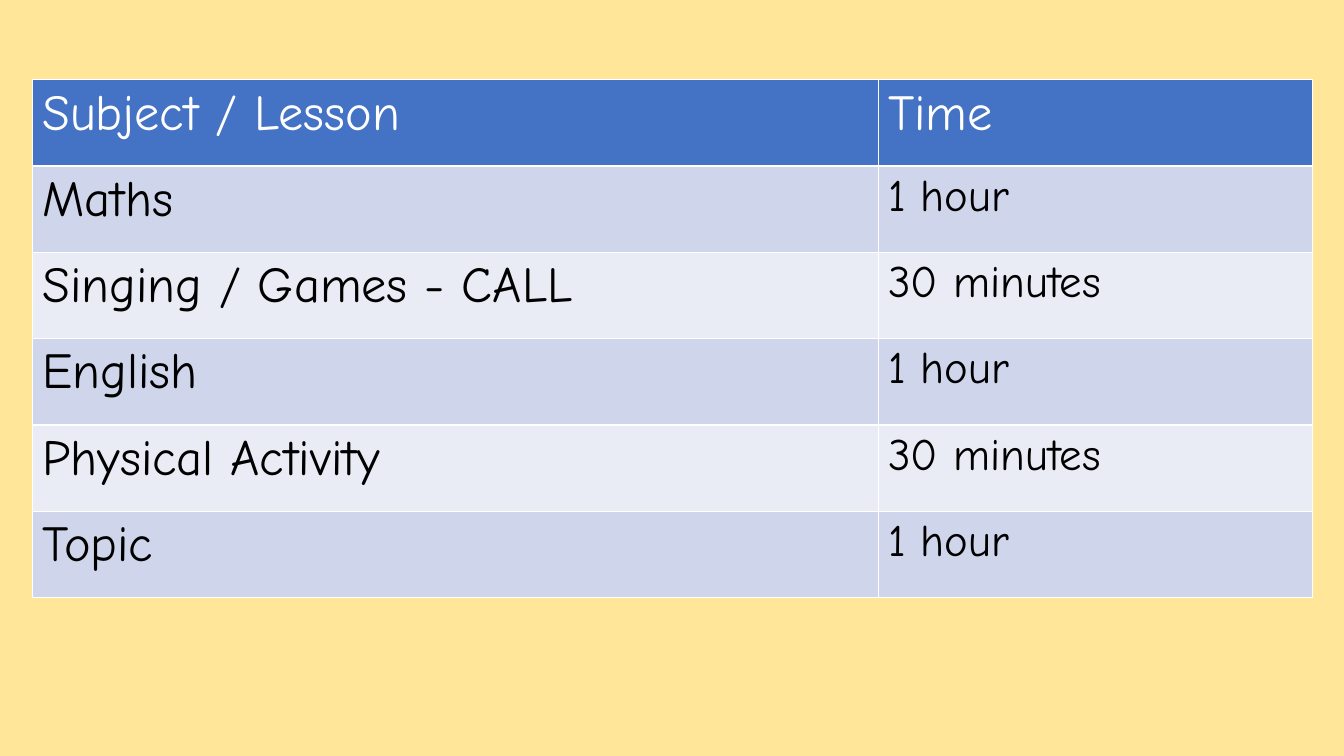
from lxml import etree
from pptx import Presentation
from pptx.dml.color import RGBColor
from pptx.oxml.ns import qn
from pptx.util import Inches, Pt

FONT = "Comic Neue"
WHITE, BLACK = "FFFFFF", "000000"
HEADER, BAND_DARK, BAND_LIGHT = "4472C4", "CFD5EA", "E9EBF5"
ROWS = [
    ("Subject / Lesson", "Time"),
    ("Maths", "1 hour"),
    ("Singing / Games - CALL", "30 minutes"),
    ("English", "1 hour"),
    ("Physical Activity", "30 minutes"),
    ("Topic", "1 hour"),
]
COL_WIDTHS = (8.39, 4.31)
TABLE_HEIGHT = 5.14


def rgb(color):
    return RGBColor.from_string(color)


def add_borders(cell, color):
    """Draw 1 pt borders round the cell; call before the fill is set."""
    tc_pr = cell._tc.get_or_add_tcPr()
    for side in "LRTB":
        ln = etree.SubElement(tc_pr, qn(f"a:ln{side}"), w=str(Pt(1)))
        fill = etree.SubElement(ln, qn("a:solidFill"))
        etree.SubElement(fill, qn("a:srgbClr"), val=color)


prs = Presentation()
prs.slide_width, prs.slide_height = Inches(13.33), Inches(7.5)
s = prs.slides.add_slide(prs.slide_layouts[6])
s.background.fill.solid()
s.background.fill.fore_color.rgb = rgb("FFE699")

timetable = s.shapes.add_table(
    len(ROWS), len(COL_WIDTHS), Inches(0.32), Inches(0.79),
    Inches(sum(COL_WIDTHS)), Inches(TABLE_HEIGHT)).table
for column, width in zip(timetable.columns, COL_WIDTHS):
    column.width = Inches(width)

for i, texts in enumerate(ROWS):
    timetable.rows[i].height = Inches(TABLE_HEIGHT / len(ROWS))
    is_header = i == 0
    band = HEADER if is_header else BAND_DARK if i % 2 else BAND_LIGHT
    for j, text in enumerate(texts):
        cell = timetable.cell(i, j)
        add_borders(cell, WHITE)
        cell.fill.solid()
        cell.fill.fore_color.rgb = rgb(band)
        r = cell.text_frame.paragraphs[0].add_run()
        r.text = text
        r.font.name = FONT
        r.font.size = Pt(36 if is_header or j == 0 else 32)
        r.font.bold = False
        r.font.color.rgb = rgb(WHITE if is_header else BLACK)

prs.save("out.pptx")
